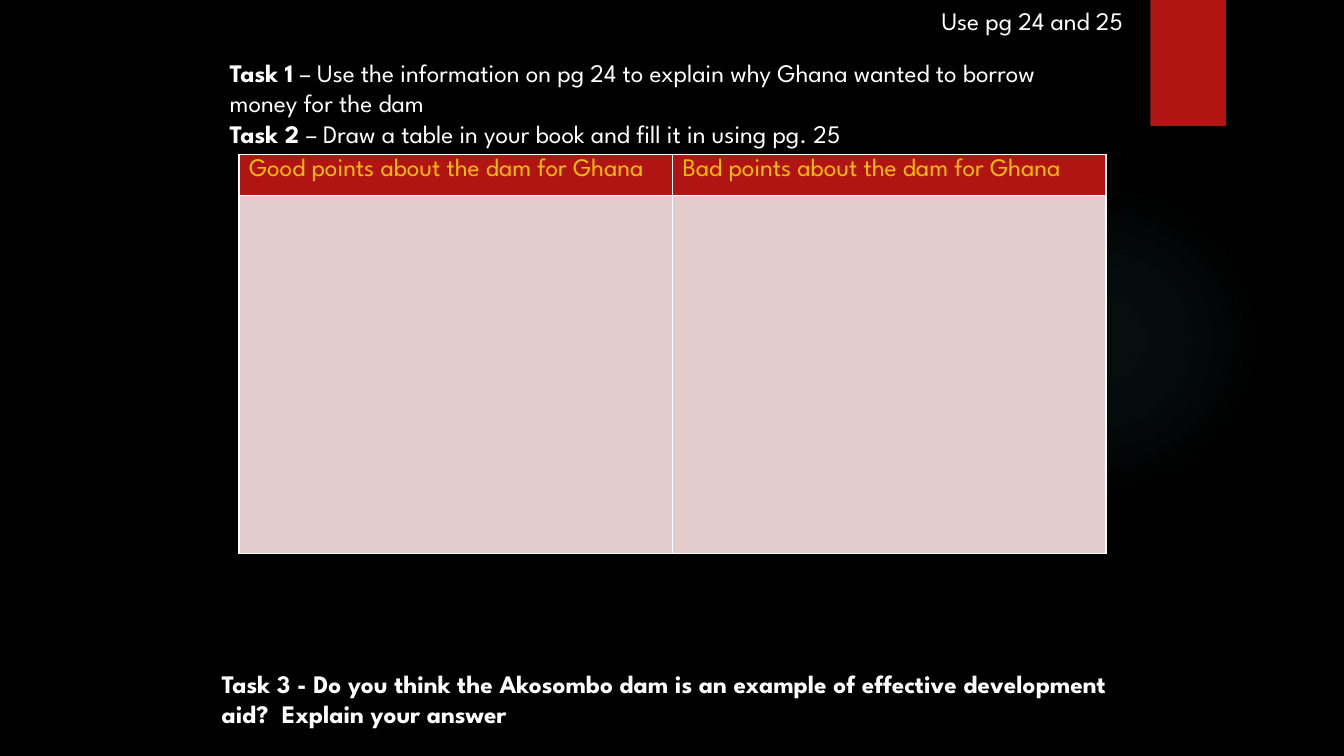
from lxml import etree
from pptx import Presentation
from pptx.dml.color import RGBColor
from pptx.enum.shapes import MSO_SHAPE
from pptx.enum.text import MSO_AUTO_SIZE
from pptx.oxml import parse_xml
from pptx.oxml.ns import qn
from pptx.util import Inches, Pt

OVAL = MSO_SHAPE.OVAL
RECTANGLE = MSO_SHAPE.RECTANGLE
GROW = MSO_AUTO_SIZE.SHAPE_TO_FIT_TEXT
DRAWING = "http://schemas.openxmlformats.org/drawingml/2006/main"

BLACK, WHITE, RED = "000000", "FFFFFF", "B01513"
PINK, GOLD, TEAL = "E4CCCC", "FFC000", "50B9C1"


def color(code):
    return RGBColor.from_string(code)


class Worksheet:
    """Holds the text style and the current page."""

    text_format = {"name": "League Spartan", "size": Pt(18), "bold": False}

    def __init__(self, page):
        self.page = page

    def background(self, code):
        fill = self.page.background.fill
        fill.solid()
        fill.fore_color.rgb = color(code)

    def span(self, para, text, code=WHITE, **changes):
        span = para.add_run()
        span.text = text
        for name, value in {**self.text_format, **changes}.items():
            setattr(span.font, name, value)
        span.font.color.rgb = color(code)

    def shape(self, kind, place):
        shape = self.page.shapes.add_shape(kind, *map(Inches, place))
        shape.shadow.inherit = False
        shape.line.fill.background()
        return shape

    def block(self, place, code):
        fill = self.shape(RECTANGLE, place).fill
        fill.solid()
        fill.fore_color.rgb = color(code)

    def glow(self, place, code, stops):
        """Draw a radial glow; stops are pairs of position and opacity in percent."""
        shape = self.shape(OVAL, place)
        shape.fill.background()
        marks = "".join(
            f'<a:gs pos="{position * 1000}"><a:srgbClr val="{code}">'
            f'<a:alpha val="{opacity * 1000}"/></a:srgbClr></a:gs>'
            for position, opacity in stops)
        gradient = parse_xml(
            f'<a:gradFill xmlns:a="{DRAWING}" rotWithShape="1"><a:gsLst>{marks}</a:gsLst>'
            '<a:path path="circle"><a:fillToRect l="50000" t="50000" r="50000" b="50000"/>'
            '</a:path></a:gradFill>')
        properties = shape.element.spPr
        properties.replace(properties.find(qn("a:noFill")), gradient)

    def text(self, place, paragraphs):
        """Add a box; each paragraph is a list of (text, bold) pairs."""
        box = self.page.shapes.add_textbox(*map(Inches, place))
        frame = box.text_frame
        frame.word_wrap = True
        frame.auto_size = GROW
        for index, spans in enumerate(paragraphs):
            para = frame.add_paragraph() if index else frame.paragraphs[0]
            for words, bold in spans:
                self.span(para, words, bold=bold)

    def borders(self, cell, code, points):
        properties = cell._tc.get_or_add_tcPr()
        for side in ("lnL", "lnR", "lnT", "lnB"):
            line = etree.SubElement(properties, qn(f"a:{side}"), w=str(Pt(points)))
            fill = etree.SubElement(line, qn("a:solidFill"))
            etree.SubElement(fill, qn("a:srgbClr"), val=code)

    def table(self, place, heights, headings):
        frame = self.page.shapes.add_table(
            len(heights), len(headings), *map(Inches, place))
        table = frame.table
        for row, height in zip(table.rows, heights):
            row.height = Inches(height)
        for index, cell in enumerate(table.iter_cells()):
            is_heading = index < len(headings)
            self.borders(cell, WHITE, 1)
            cell.fill.solid()
            cell.fill.fore_color.rgb = color(RED if is_heading else PINK)
            if is_heading:
                self.span(cell.text_frame.paragraphs[0], headings[index], GOLD)


def main():
    deck = Presentation()
    deck.slide_width, deck.slide_height = Inches(13.33), Inches(7.5)
    sheet = Worksheet(deck.slides.add_slide(deck.slide_layouts[6]))

    # Backdrop
    sheet.background(BLACK)
    sheet.glow((9.41, 1.83, 3.08, 3.08), TEAL, [(0, 7), (36, 6), (69, 0)])
    sheet.block((11.41, 0, 0.75, 1.25), RED)

    # Table to fill in
    sheet.table((2.37, 1.53, 8.6, 3.96), (0.41, 3.55),
                ("Good points about the dam for Ghana",
                 "Bad points about the dam for Ghana"))

    # Tasks and page reference
    sheet.text((2.1, 6.58, 8.98, 0.71), [
        [("Task 3 - Do you think the Akosombo dam is an example of effective "
          "development aid?  Explain your answer", True)]])
    sheet.text((9.24, 0, 2.42, 0.4), [[("Use pg 24 and 25", False)]])
    sheet.text((2.18, 0.52, 8.9, 1.01), [
        [("Task 1 ", True),
         ("– Use the information on pg 24 to explain why Ghana wanted to "
          "borrow money for the dam", False)],
        [("Task 2 ", True),
         ("– Draw a table in your book and fill it in using pg. 25", False)]])

    deck.save("out.pptx")


if __name__ == "__main__":
    main()
